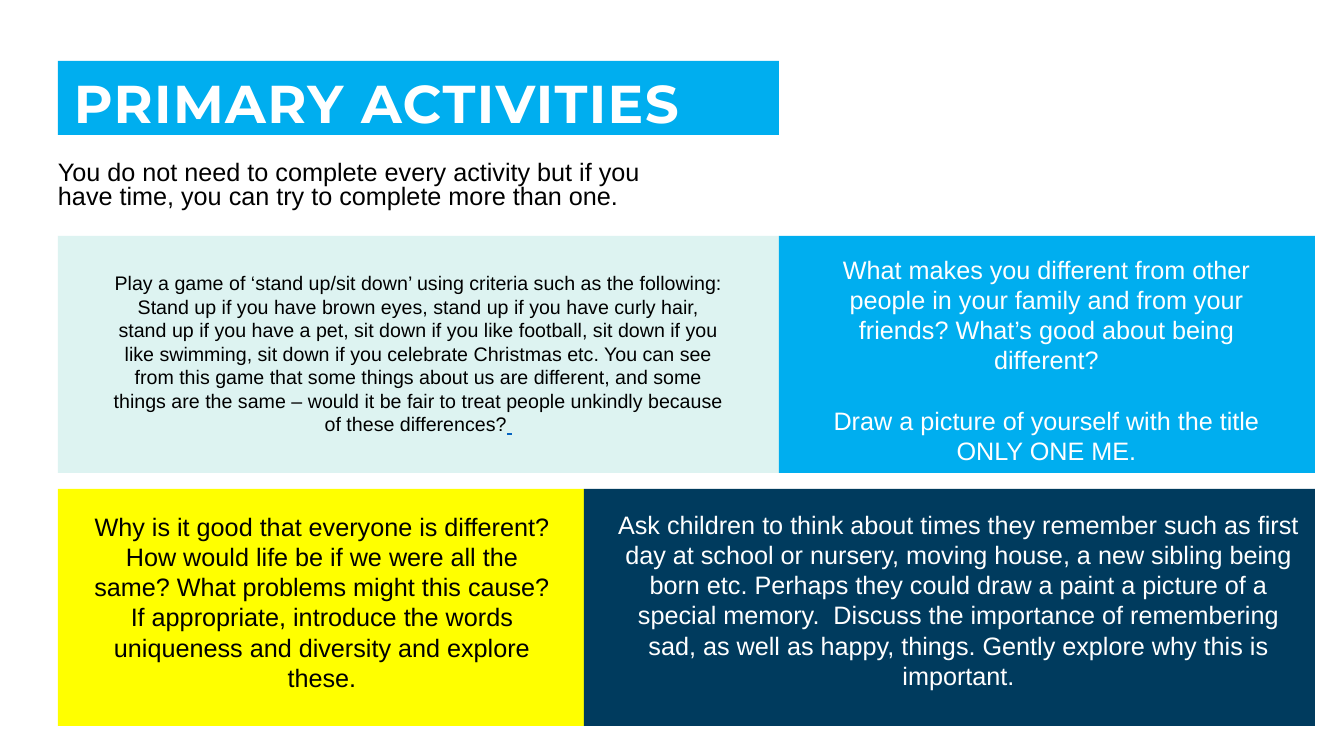
from pptx import Presentation
from pptx.dml.color import RGBColor
from pptx.enum.shapes import MSO_SHAPE
from pptx.enum.text import MSO_ANCHOR, PP_ALIGN
from pptx.util import Emu, Pt

RECTANGLE = MSO_SHAPE.RECTANGLE
MIDDLE, TOP = MSO_ANCHOR.MIDDLE, MSO_ANCHOR.TOP
LEFT, CENTER = PP_ALIGN.LEFT, PP_ALIGN.CENTER

EMU_PER_PX = 914400 / 100.8
BLUE, NAVY, YELLOW, MINT = "00AEEF", "003B5E", "FFFF00", "DDF3F1"
BLACK, WHITE, LINK = "000000", "FFFFFF", "0563C1"

LEFT_EDGE, RIGHT_EDGE = 58, 1315
UPPER_SPLIT, LOWER_SPLIT = 779, 584
UPPER_TOP, LOWER_TOP, PANEL_HEIGHT = 236, 489, 237

GAME = (
    "Play a game of ‘stand up/sit down’ using criteria such as the following: "
    "Stand up if you have brown eyes, stand up if you have curly hair, stand up "
    "if you have a pet, sit down if you like football, sit down if you like "
    "swimming, sit down if you celebrate Christmas etc. You can see from this "
    "game that some things about us are different, and some things are the same "
    "– would it be fair to treat people unkindly because of these differences?"
)
DIFFERENT = (
    "What makes you different from other people in your family and from your "
    "friends? What’s good about being different?"
)
DRAW = "Draw a picture of yourself with the title ONLY ONE ME."
DIVERSITY = (
    "Why is it good that everyone is different? How would life be if we were all "
    "the same? What problems might this cause? If appropriate, introduce the "
    "words uniqueness and diversity and explore these."
)
MEMORIES = (
    "Ask children to think about times they remember such as first day at school "
    "or nursery, moving house, a new sibling being born etc. Perhaps they could "
    "draw a paint a picture of a special memory.  Discuss the importance of "
    "remembering sad, as well as happy, things. Gently explore why this is "
    "important."
)
INTRODUCTION = (
    "You do not need to complete every activity but if you have time, you can "
    "try to complete more than one."
)


def color(value):
    """Turn a hex string into a colour."""
    return RGBColor.from_string(value)


def px(length):
    """Turn whole pixels into EMU."""
    return Emu(round(length * EMU_PER_PX))


class SlideBuilder:
    """Draw styled elements on one slide."""

    font_name = "Arial"
    insets = (10, 5, 10, 5)

    def __init__(self, slide):
        """Keep the slide to draw on."""
        self.slide = slide

    def panel(self, left, top, width, height, fill):
        """Add a plain filled rectangle."""
        shape = self.slide.shapes.add_shape(
            RECTANGLE, px(left), px(top), px(width), px(height))
        shape.shadow.inherit = False
        shape.fill.solid()
        shape.fill.fore_color.rgb = color(fill)
        shape.line.fill.background()
        return shape

    def text(self, left, top, width, height, paragraphs, **style):
        """Add a wrapped text box."""
        shape = self.slide.shapes.add_textbox(
            px(left), px(top), px(width), px(height))
        self.set_text(shape, paragraphs, **style)
        return shape

    def set_text(self, shape, paragraphs, size=18, ink=BLACK, align=CENTER,
                 anchor=TOP, insets=insets, spacing=None, gap=21.6):
        """Fill a shape with styled paragraphs."""
        frame = shape.text_frame
        frame.word_wrap = True
        frame.vertical_anchor = anchor
        (frame.margin_left, frame.margin_top,
         frame.margin_right, frame.margin_bottom) = map(px, insets)
        frame.text = "\n".join(paragraphs)
        for index, paragraph in enumerate(frame.paragraphs):
            paragraph.alignment = align
            if spacing:
                paragraph.line_spacing = spacing
            if index:
                paragraph.space_before = Pt(gap)
            for run in paragraph.runs:
                self.style_run(run, size, ink)

    def style_run(self, run, size, ink):
        """Set the font of a run."""
        run.font.name = self.font_name
        run.font.size = Pt(size)
        run.font.color.rgb = color(ink)

    def title(self, left, top, width, height, wording):
        """Add the heading banner."""
        banner = self.panel(left, top, width, height, BLUE)
        self.set_text(banner, [wording], 38, WHITE, LEFT, MIDDLE,
                      (16, 16, 12, 0), 0.9)
        run = banner.text_frame.paragraphs[0].runs[0]
        run.font.name = "Montserrat"
        run.font.bold = True
        run._r.get_or_add_rPr().set("spc", "100")

    def underlined_end(self, shape):
        """Close the text with an underlined space."""
        run = shape.text_frame.paragraphs[-1].add_run()
        run.text = " "
        self.style_run(run, 14, LINK)
        run.font.underline = True


def main():
    """Build and save the slide."""
    presentation = Presentation()
    presentation.slide_width = px(1344)
    presentation.slide_height = px(756)
    slide = presentation.slides.add_slide(presentation.slide_layouts[6])
    builder = SlideBuilder(slide)

    builder.title(LEFT_EDGE, 61, UPPER_SPLIT - LEFT_EDGE, 74, "PRIMARY ACTIVITIES")
    builder.text(LEFT_EDGE, 157, 626, 63, [INTRODUCTION], align=LEFT,
                 insets=(0, 5, 10, 5), spacing=0.8)

    rows = (
        (UPPER_TOP, UPPER_SPLIT, MINT, BLUE),
        (LOWER_TOP, LOWER_SPLIT, YELLOW, NAVY),
    )
    for top, split, left_fill, right_fill in rows:
        builder.panel(LEFT_EDGE, top, split - LEFT_EDGE, PANEL_HEIGHT, left_fill)
        builder.panel(split, top, RIGHT_EDGE - split, PANEL_HEIGHT, right_fill)

    game = builder.text(101, 266, 635, 176, [GAME], size=14)
    builder.underlined_end(game)
    builder.text(75, 506, 494, 194, [DIVERSITY])
    builder.text(797, 249, 499, 224, [DIFFERENT, DRAW], ink=WHITE)
    builder.text(607, 504, 703, 224, [MEMORIES], ink=WHITE)

    presentation.save("out.pptx")


if __name__ == "__main__":
    main()
